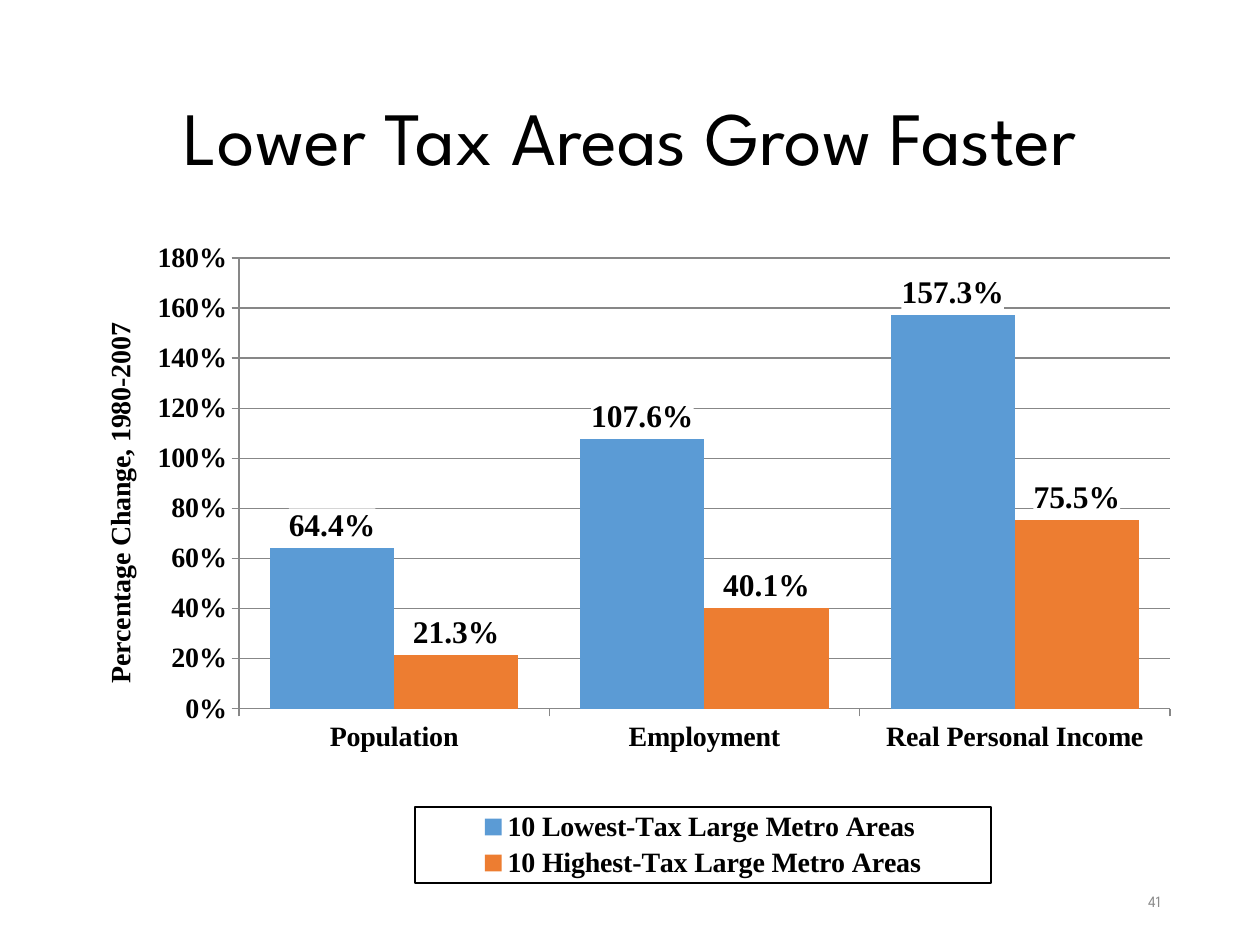
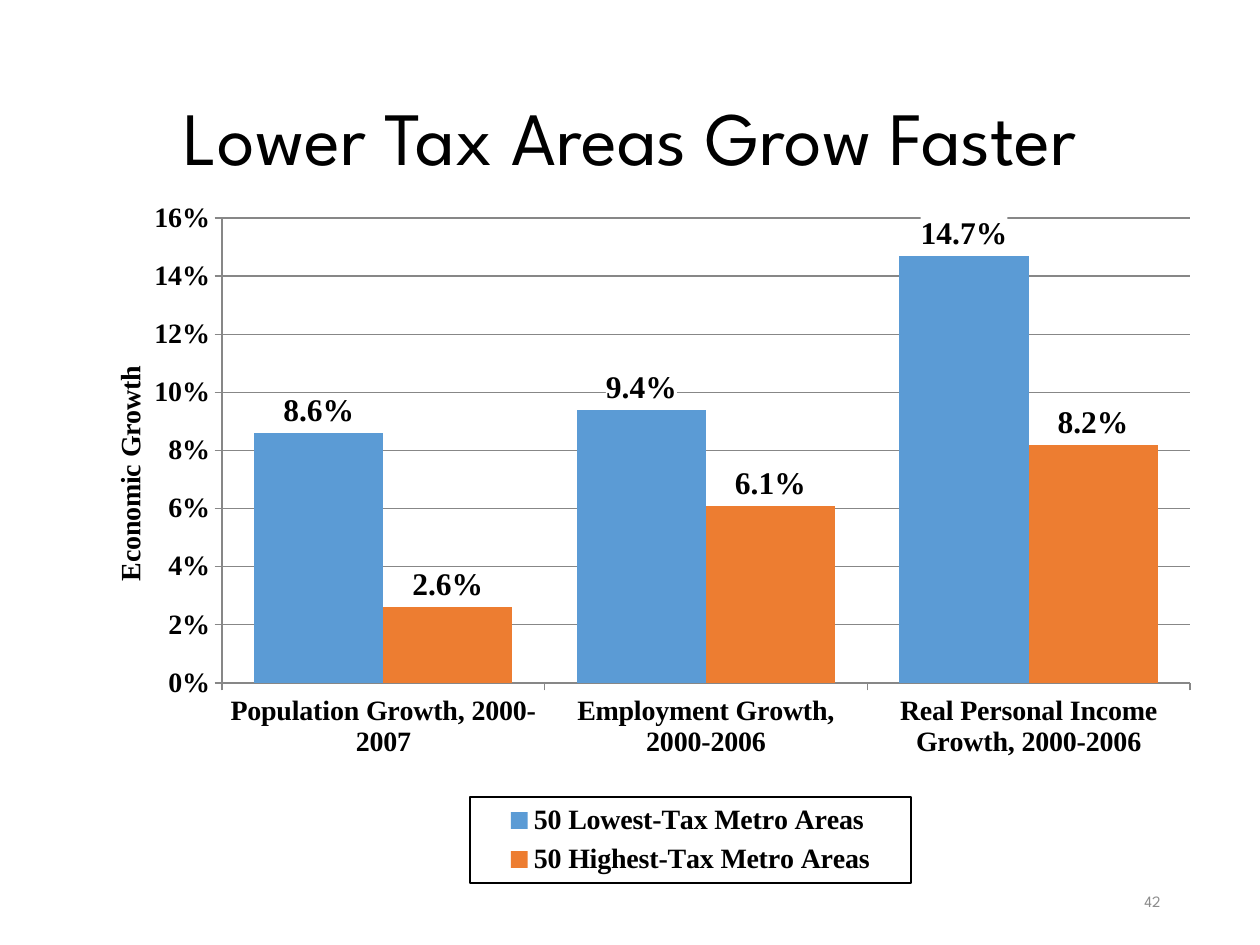
from dataclasses import dataclass

from lxml import etree
from pptx import Presentation
from pptx.chart.data import CategoryChartData
from pptx.dml.color import RGBColor
from pptx.enum.chart import XL_CHART_TYPE, XL_LABEL_POSITION, XL_LEGEND_POSITION, XL_TICK_MARK
from pptx.enum.text import MSO_ANCHOR, PP_ALIGN
from pptx.oxml import parse_xml
from pptx.oxml.ns import nsdecls, qn
from pptx.util import Pt

COLUMNS = XL_CHART_TYPE.COLUMN_CLUSTERED
ABOVE_BAR = XL_LABEL_POSITION.OUTSIDE_END
LEGEND_BOTTOM = XL_LEGEND_POSITION.BOTTOM
TICK_OUTSIDE = XL_TICK_MARK.OUTSIDE
MIDDLE = MSO_ANCHOR.MIDDLE
CENTER, RIGHT = PP_ALIGN.CENTER, PP_ALIGN.RIGHT


@dataclass(frozen=True)
class Theme:
    """Colours, fonts and type sizes shared by the slides."""
    ink: str = "000000"
    paper: str = "FFFFFF"
    muted: str = "8C8C8C"
    rule: str = "878787"
    bars: tuple = ("5B9BD5", "ED7D31")
    heading_font: str = "League Spartan"
    chart_font: str = "Times New Roman"
    title_size: int = 43
    label_size: int = 18
    axis_size: int = 16
    number_size: int = 9


@dataclass(frozen=True)
class GrowthChart:
    """Content of one chart slide; part boxes are relative to the chart box."""
    number: str
    axis_title: str
    categories: tuple
    series: dict
    top: float
    step: float
    box: tuple
    plot_box: tuple
    legend_box: tuple
    axis_title_at: tuple


THEME = Theme()
SLIDE_SIZE = (1260, 945)
TITLE = "Lower Tax Areas Grow Faster"
TITLE_BOX = (87, 50, 1086, 183)
NUMBER_BOX = (890, 876, 283, 50)

SLIDES = (
    GrowthChart(
        number="41",
        axis_title="Percentage Change, 1980-2007",
        categories=("Population", "Employment", "Real Personal Income"),
        series={
            "10 Lowest-Tax Large Metro Areas": (0.644, 1.076, 1.573),
            "10 Highest-Tax Large Metro Areas": (0.213, 0.401, 0.755),
        },
        top=1.8, step=0.2,
        box=(63, 221, 1134, 671),
        plot_box=(176, 37, 931, 451),
        legend_box=(352, 586, 576, 76),
        axis_title_at=(34, 97),
    ),
    GrowthChart(
        number="42",
        axis_title="Economic Growth",
        categories=("Population Growth, 2000-2007", "Employment Growth, 2000-2006",
                    "Real Personal Income Growth, 2000-2006"),
        series={
            "50 Lowest-Tax Metro Areas": (0.086, 0.094, 0.147),
            "50 Highest-Tax Metro Areas": (0.026, 0.061, 0.082),
        },
        top=0.16, step=0.02,
        box=(63, 189, 1134, 703),
        plot_box=(159, 29, 968, 465),
        legend_box=(407, 608, 441, 86),
        axis_title_at=(44, 172),
    ),
)


def px(length):
    """Turn whole px into EMU at 126 px to the inch."""
    return round(length * 914400 / 126)


def style_font(font, name, size, color, bold=False):
    """Set the face, size, colour and weight of a font."""
    font.name, font.size, font.bold = name, Pt(size), bold
    font.color.rgb = RGBColor.from_string(color)


def add_text(page, box, text, size, color, align, spacing=1.0):
    """Add one middle-anchored line in the heading font."""
    frame = page.shapes.add_textbox(*map(px, box)).text_frame
    frame.word_wrap = True
    frame.vertical_anchor = MIDDLE
    para = frame.paragraphs[0]
    para.text, para.alignment, para.line_spacing = text, align, spacing
    style_font(para.font, THEME.heading_font, size, color)


def set_layout(parent, index, part_box, chart_box, inner=False):
    """Fix a chart part at a px box inside the chart box."""
    for old in parent.findall(qn("c:layout")):
        parent.remove(old)
    layout = etree.Element(qn("c:layout"))
    manual = etree.SubElement(layout, qn("c:manualLayout"))
    settings = [("layoutTarget", "inner")] if inner else []
    settings += [("xMode", "edge"), ("yMode", "edge")]
    width, height = chart_box[2:]
    settings += [(key, f"{length / whole:.4f}") for key, length, whole
                 in zip("xywh", part_box, (width, height, width, height))]
    for key, value in settings:
        etree.SubElement(manual, qn(f"c:{key}")).set("val", value)
    parent.insert(index, layout)


def set_backing(part, line=None):
    """Give a legend or label set a paper fill and an optional outline."""
    outline = f'<a:solidFill><a:srgbClr val="{line}"/></a:solidFill>' if line else "<a:noFill/>"
    backing = parse_xml(
        f'<c:spPr {nsdecls("c", "a")}><a:solidFill><a:srgbClr val="{THEME.paper}"/></a:solidFill>'
        f'<a:ln w="9525">{outline}</a:ln></c:spPr>')
    part.find(qn("c:txPr")).addprevious(backing)


def style_rule(line):
    """Draw an axis or grid line as a thin grey rule."""
    line.color.rgb = RGBColor.from_string(THEME.rule)
    line.width = Pt(0.75)


def style_axes(chart, content):
    """Set the scale, ticks, grid and title of both axes."""
    for axis in (chart.category_axis, chart.value_axis):
        axis.major_tick_mark = TICK_OUTSIDE
        style_rule(axis.format.line)
        style_font(axis.tick_labels.font, THEME.chart_font, THEME.axis_size, THEME.ink, True)
    axis = chart.value_axis
    axis.minimum_scale, axis.maximum_scale, axis.major_unit = 0, content.top, content.step
    axis.tick_labels.number_format = "0%"
    axis.tick_labels.number_format_is_linked = False
    style_rule(axis.major_gridlines.format.line)
    frame = axis.axis_title.text_frame
    para = frame.paragraphs[0]
    para.text = content.axis_title
    style_font(para.font, THEME.chart_font, THEME.axis_size, THEME.ink, True)
    body = frame._txBody.find(qn("a:bodyPr"))
    body.set("rot", "-5400000")
    body.set("vert", "horz")
    set_layout(axis.axis_title._element, 1, content.axis_title_at, content.box)


def style_bars(plot):
    """Colour the bars and label each with its value."""
    plot.gap_width, plot.overlap, plot.vary_by_categories = 50, 0, False
    for series, color in zip(plot.series, THEME.bars):
        series.format.fill.solid()
        series.format.fill.fore_color.rgb = RGBColor.from_string(color)
        series.invert_if_negative = False
        labels = series.data_labels
        labels.show_value = True
        labels.number_format, labels.number_format_is_linked = "0.0%", False
        labels.position = ABOVE_BAR
        style_font(labels.font, THEME.chart_font, THEME.label_size, THEME.ink, True)
        set_backing(labels._element)


def style_legend(chart, content):
    """Put the outlined legend below the plot."""
    chart.has_legend = True
    legend = chart.legend
    legend.position, legend.include_in_layout = LEGEND_BOTTOM, False
    style_font(legend.font, THEME.chart_font, THEME.axis_size, THEME.ink, True)
    set_layout(legend._element, 1, content.legend_box, content.box)
    set_backing(legend._element, THEME.ink)


def add_growth_chart(page, content):
    """Add the clustered columns inside the content's box."""
    data = CategoryChartData(number_format="0.0%")
    data.categories = content.categories
    for name, values in content.series.items():
        data.add_series(name, values)
    chart = page.shapes.add_chart(COLUMNS, *map(px, content.box), data).chart
    chart.has_title = False
    style_font(chart.font, THEME.chart_font, THEME.axis_size, THEME.ink, True)
    style_axes(chart, content)
    style_bars(chart.plots[0])
    style_legend(chart, content)
    plot_area = chart._chartSpace.chart.plotArea
    set_layout(plot_area, 0, content.plot_box, content.box, inner=True)


def add_chart_slide(deck, content):
    """Add a slide with title, chart and page number."""
    page = deck.slides.add_slide(deck.slide_layouts[6])
    add_text(page, TITLE_BOX, TITLE, THEME.title_size, THEME.ink, CENTER, 0.9)
    add_growth_chart(page, content)
    add_text(page, NUMBER_BOX, content.number, THEME.number_size, THEME.muted, RIGHT)


def main():
    """Build and save the deck."""
    deck = Presentation()
    deck.slide_width, deck.slide_height = map(px, SLIDE_SIZE)
    for content in SLIDES:
        add_chart_slide(deck, content)
    deck.save("out.pptx")


if __name__ == "__main__":
    main()
